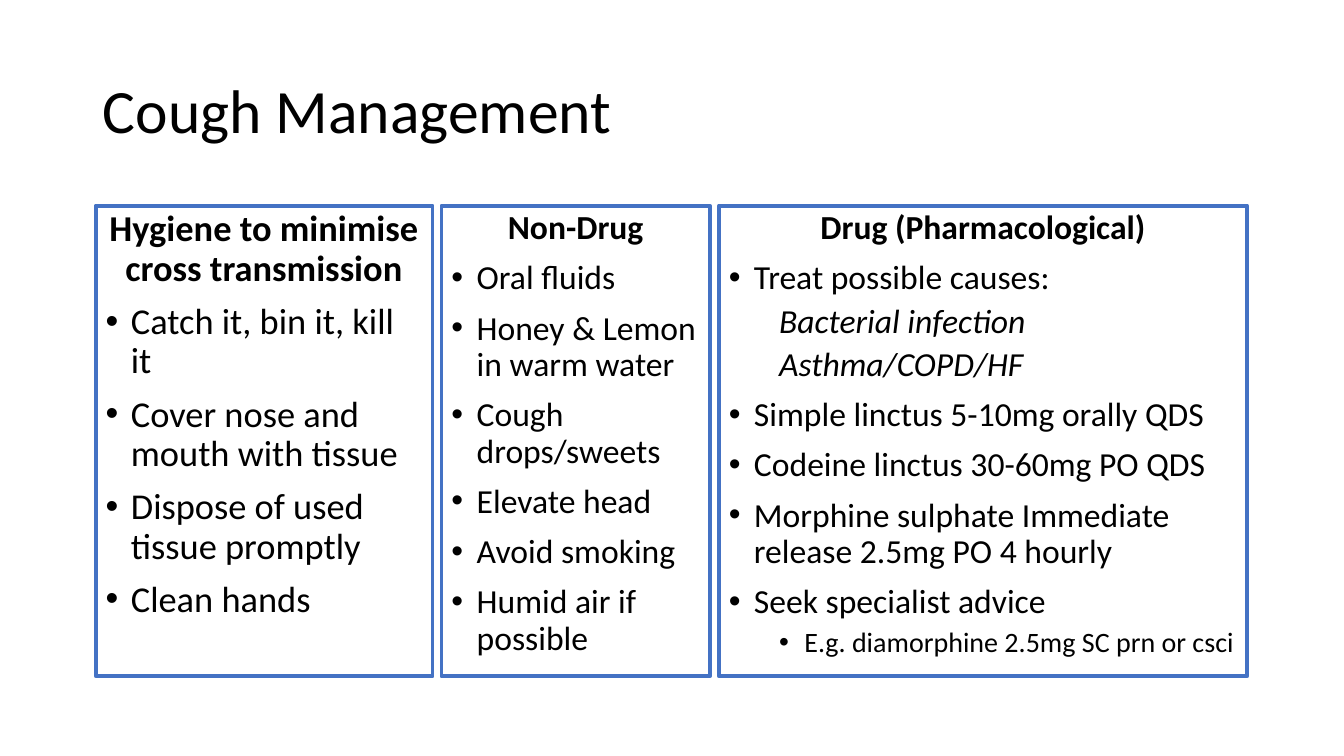
from dataclasses import dataclass

from lxml import etree
from pptx import Presentation
from pptx.dml.color import RGBColor
from pptx.enum.shapes import MSO_SHAPE
from pptx.enum.text import MSO_ANCHOR, MSO_AUTO_SIZE, PP_ALIGN
from pptx.oxml.ns import qn
from pptx.util import Inches, Pt

RECTANGLE = MSO_SHAPE.RECTANGLE
TOP, MIDDLE = MSO_ANCHOR.TOP, MSO_ANCHOR.MIDDLE
LEFT, CENTER = PP_ALIGN.LEFT, PP_ALIGN.CENTER
NO_AUTOFIT = MSO_AUTO_SIZE.NONE

TITLE = "Cough Management"
COLUMNS = [
    {"width": 3.34, "size": 26, "lines": [
        ("heading", "Hygiene to minimise cross transmission"),
        ("bullet", "Catch it, bin it, kill it"),
        ("bullet", "Cover nose and mouth with tissue"),
        ("bullet", "Dispose of used tissue promptly"),
        ("bullet", "Clean hands"),
    ]},
    {"width": 2.66, "size": 24, "lines": [
        ("heading", "Non-Drug"),
        ("bullet", "Oral fluids"),
        ("bullet", "Honey & Lemon in warm water"),
        ("bullet", "Cough drops/sweets"),
        ("bullet", "Elevate head"),
        ("bullet", "Avoid smoking"),
        ("bullet", "Humid air if possible"),
    ]},
    {"width": 5.24, "size": 24, "lines": [
        ("heading", "Drug (Pharmacological)"),
        ("bullet", "Treat possible causes:"),
        ("cause", "Bacterial infection"),
        ("cause", "Asthma/COPD/HF"),
        ("bullet", "Simple linctus 5-10mg orally QDS"),
        ("bullet", "Codeine linctus 30-60mg PO QDS"),
        ("bullet", "Morphine sulphate Immediate release 2.5mg PO 4 hourly"),
        ("bullet", "Seek specialist advice"),
        ("example", "E.g. diamorphine 2.5mg SC prn or csci"),
    ]},
]


@dataclass(frozen=True)
class Theme:
    font: str = "Calibri"
    text: RGBColor = RGBColor(0x00, 0x00, 0x00)
    border: RGBColor = RGBColor(0x44, 0x72, 0xC4)
    border_width: float = 2.75
    title_size: int = 44
    example_size: int = 20
    line_spacing: float = 0.9


@dataclass(frozen=True)
class LineStyle:
    level: int = 0
    margin: float = 0
    indent: float = 0
    before: int = 10
    bullet: bool = False
    bold: bool = False
    italic: bool = False
    align: int = LEFT


THEME = Theme()
STYLES = {
    "heading": LineStyle(bold=True, align=CENTER),
    "bullet": LineStyle(margin=0.25, indent=-0.25, bullet=True),
    "cause": LineStyle(level=1, margin=0.5, before=5, italic=True),
    "example": LineStyle(level=1, margin=0.75, indent=-0.25, before=5, bullet=True),
}
SLIDE_WIDTH, SLIDE_HEIGHT = 13.33, 7.5
TITLE_BOX = (0.92, 0.4, 11.5, 1.45)
COLUMNS_LEFT, COLUMNS_TOP, COLUMN_HEIGHT, COLUMN_GAP = 0.95, 2.04, 4.67, 0.09


def format_paragraph(paragraph, size, style):
    paragraph.level = style.level
    paragraph.alignment = style.align
    paragraph.line_spacing = THEME.line_spacing
    paragraph.space_before = Pt(style.before)
    for run in paragraph.runs:
        run.font.name = THEME.font
        run.font.size = Pt(size)
        run.font.bold = style.bold
        run.font.italic = style.italic
        run.font.color.rgb = THEME.text
    properties = paragraph._p.get_or_add_pPr()
    properties.set("marL", str(Inches(style.margin)))
    properties.set("indent", str(Inches(style.indent)))
    if style.bullet:
        etree.SubElement(properties, qn("a:buFont")).set("typeface", "Arial")
        etree.SubElement(properties, qn("a:buChar")).set("char", "•")
    else:
        etree.SubElement(properties, qn("a:buNone"))


def add_title(slide):
    title = slide.shapes.title
    title.left, title.top, title.width, title.height = map(Inches, TITLE_BOX)
    frame = title.text_frame
    frame.text = TITLE
    frame.auto_size = NO_AUTOFIT
    frame.vertical_anchor = MIDDLE
    format_paragraph(frame.paragraphs[0], THEME.title_size, LineStyle(before=0))


def add_column(slide, left, column):
    box = slide.shapes.add_shape(
        RECTANGLE, Inches(left), Inches(COLUMNS_TOP),
        Inches(column["width"]), Inches(COLUMN_HEIGHT))
    box.shadow.inherit = False
    box.fill.background()
    box.line.color.rgb = THEME.border
    box.line.width = Pt(THEME.border_width)
    frame = box.text_frame
    frame.word_wrap = True
    frame.vertical_anchor = TOP
    frame.text = "\n".join(text for _, text in column["lines"])
    for paragraph, (kind, _) in zip(frame.paragraphs, column["lines"]):
        size = THEME.example_size if kind == "example" else column["size"]
        format_paragraph(paragraph, size, STYLES[kind])


def main():
    presentation = Presentation()
    presentation.slide_width = Inches(SLIDE_WIDTH)
    presentation.slide_height = Inches(SLIDE_HEIGHT)
    slide = presentation.slides.add_slide(presentation.slide_layouts.get_by_name("Title Only"))
    add_title(slide)
    left = COLUMNS_LEFT
    for column in COLUMNS:
        add_column(slide, left, column)
        left += column["width"] + COLUMN_GAP
    presentation.save("out.pptx")


if __name__ == "__main__":
    main()
